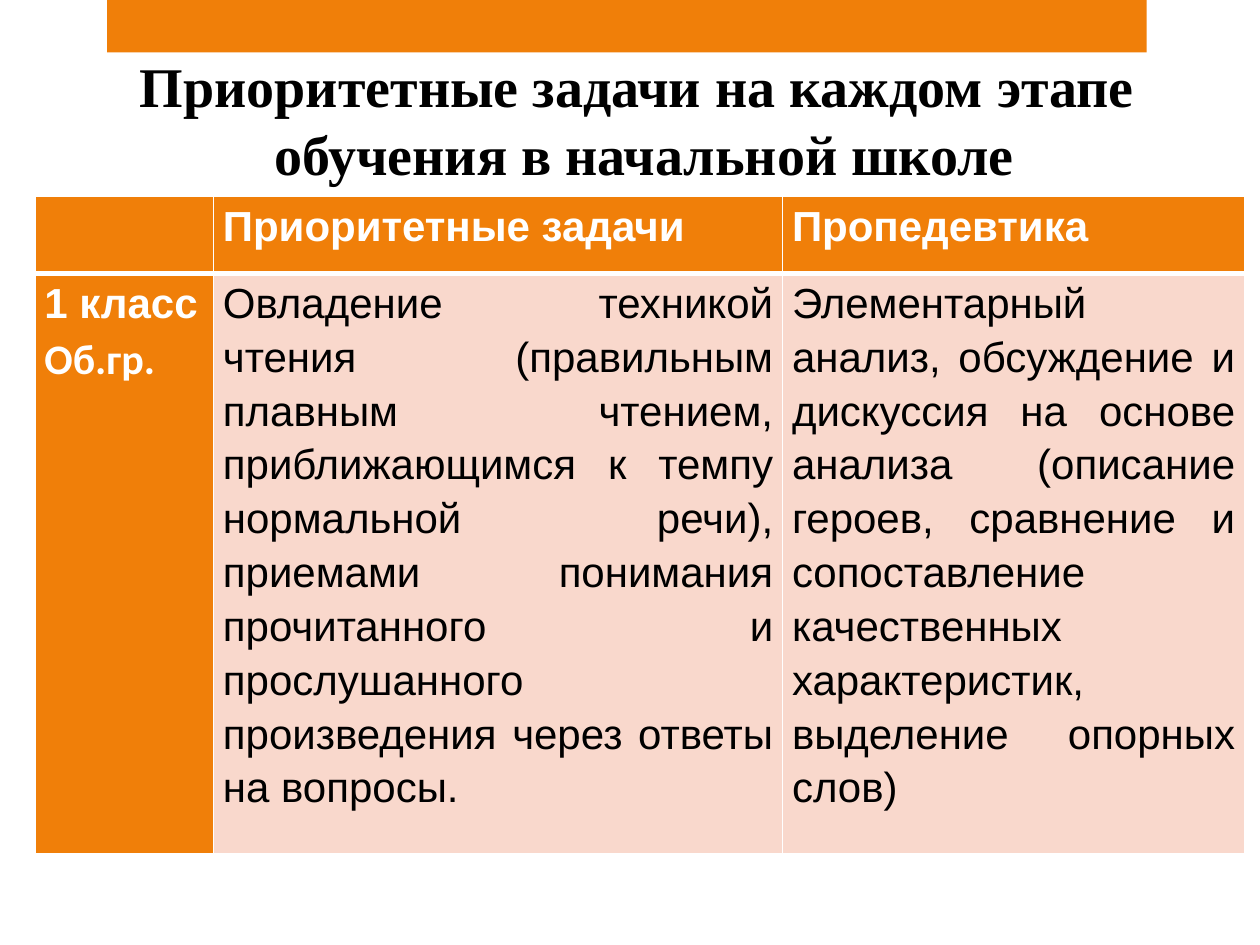
import pptx
import pptx.dml.color
import pptx.enum.shapes
import pptx.enum.text
import pptx.oxml
import pptx.oxml.ns
import pptx.util
from lxml import etree

Pt = pptx.util.Pt
ALIGN = pptx.enum.text.PP_ALIGN
ANCHOR = pptx.enum.text.MSO_ANCHOR
ORANGE, PEACH, WHITE, BLACK = "F07F09", "F9D8CC", "FFFFFF", "000000"


def paint(target, color):
    """Give a shape or cell a solid fill."""
    target.fill.solid()
    target.fill.fore_color.rgb = pptx.dml.color.RGBColor.from_string(color)


def write_paragraphs(frame, lines, alignment, spacing, color, fonts, **font_format):
    """Write one paragraph per line, each with its own font name."""
    for index, (line, font_name) in enumerate(zip(lines, fonts)):
        paragraph = frame.paragraphs[0] if index == 0 else frame.add_paragraph()
        paragraph.alignment = alignment
        paragraph.line_spacing = spacing
        run = paragraph.add_run()
        run.text = line
        for name, value in {"name": font_name, **font_format}.items():
            setattr(run.font, name, value)
        run.font.color.rgb = pptx.dml.color.RGBColor.from_string(color)


presentation = pptx.Presentation()
presentation.slide_width, presentation.slide_height = Pt(720), Pt(540)
slide = presentation.slides.add_slide(presentation.slide_layouts[5])

# Bars above and below the content
for top, height in ((0, 30), (486, 2)):
    bar = slide.shapes.add_shape(
        pptx.enum.shapes.MSO_SHAPE.RECTANGLE, Pt(61.2), Pt(top), Pt(594), Pt(height))
    bar.shadow.inherit = False
    bar.line.fill.background()
    paint(bar, ORANGE)

# Title
title = slide.shapes.title
title_box = {"left": 8.4, "top": 26, "width": 711.6, "height": 85}
for name, value in title_box.items():
    setattr(title, name, Pt(value))
title_format = {"word_wrap": True, "vertical_anchor": ANCHOR.TOP,
                "auto_size": pptx.enum.text.MSO_AUTO_SIZE.NONE}
for name, value in title_format.items():
    setattr(title.text_frame, name, value)
write_paragraphs(
    title.text_frame,
    ["Приоритетные задачи на каждом этапе", " обучения в начальной школе"],
    ALIGN.CENTER, 1.0, BLACK, ["Times New Roman"] * 2, size=Pt(32), bold=True)

# Table of priorities
rows = [
    [[], ["Приоритетные задачи"], ["Пропедевтика"]],
    [
        ["1 класс", "Об.гр."],
        ["Овладение техникой чтения (правильным плавным чтением, приближающимся к "
         "темпу нормальной речи), приемами понимания прочитанного и прослушанного "
         "произведения через ответы на вопросы."],
        ["Элементарный анализ, обсуждение и дискуссия на основе анализа (описание "
         "героев, сравнение и сопоставление качественных характеристик, выделение "
         "опорных слов)"],
    ],
]
column_widths = [102, 325.2, 264]
row_heights = [44, 331.4]
table = slide.shapes.add_table(
    len(rows), len(column_widths), Pt(20), Pt(112.3),
    Pt(sum(column_widths)), Pt(sum(row_heights))).table
for column, width in zip(table.columns, column_widths):
    column.width = Pt(width)
for row, height in zip(table.rows, row_heights):
    row.height = Pt(height)

cell_format = {"margin_left": Pt(5.4), "margin_right": Pt(5.4), "margin_top": 0,
               "margin_bottom": 0, "vertical_anchor": ANCHOR.TOP}
for row_index, row in enumerate(rows):
    for column_index, lines in enumerate(row):
        cell = table.cell(row_index, column_index)
        is_header = row_index == 0 or column_index == 0
        for name, value in cell_format.items():
            setattr(cell, name, value)
        paint(cell, ORANGE if is_header else PEACH)
        write_paragraphs(
            cell.text_frame, lines, ALIGN.JUSTIFY, 1.15, WHITE if is_header else BLACK,
            ["Arial", "Calibri"], size=Pt(24), bold=is_header)

        # A thick rule parts the header row from the body
        thick_side = "lnB" if row_index == 0 else "lnT"
        properties = cell._tc.get_or_add_tcPr()
        for position, side in enumerate(("lnL", "lnR", "lnT", "lnB")):
            border = etree.Element(pptx.oxml.ns.qn("a:" + side))
            border.set("w", str(Pt(3 if side == thick_side else 1)))
            fill = etree.SubElement(border, pptx.oxml.ns.qn("a:solidFill"))
            etree.SubElement(fill, pptx.oxml.ns.qn("a:srgbClr")).set("val", WHITE)
            properties.insert(position, border)

presentation.save("out.pptx")
